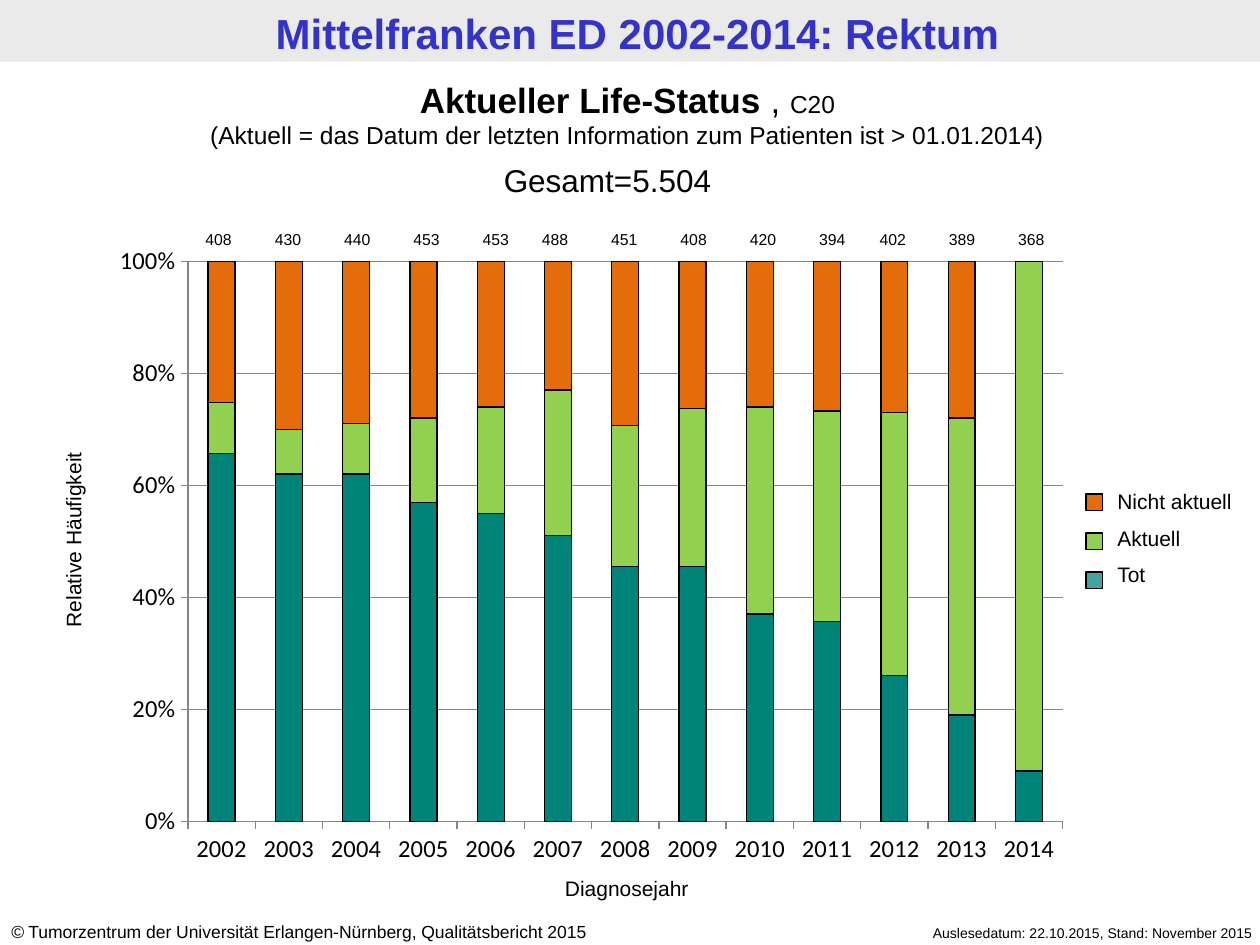
from lxml import etree
from pptx import Presentation
from pptx.chart.data import CategoryChartData
from pptx.dml.color import RGBColor
from pptx.enum.chart import XL_CHART_TYPE as ChartType, XL_TICK_MARK as TickMark
from pptx.enum.shapes import MSO_SHAPE as Shape
from pptx.enum.text import PP_ALIGN as Align
from pptx.oxml import parse_xml
from pptx.oxml.ns import nsdecls, qn
from pptx.util import Inches, Pt

BLACK = RGBColor(0x00, 0x00, 0x00)
BLUE = RGBColor(0x33, 0x33, 0xCC)
BAND = RGBColor(0xEA, 0xEA, 0xEA)
GRID = RGBColor(0x86, 0x86, 0x86)
TEAL = RGBColor(0x00, 0x83, 0x78)
LEGEND_TEAL = RGBColor(0x00, 0x83, 0x80)
GREEN = RGBColor(0x92, 0xD0, 0x50)
ORANGE = RGBColor(0xE4, 0x6C, 0x0A)

WIDTH, HEIGHT = 10, 7.5
YEARS = [str(year) for year in range(2002, 2015)]
SERIES = [
    ("Tot", TEAL, (65, 62, 62, 57, 55, 51, 45, 45, 37, 36, 26, 19, 9)),
    ("Aktuell", GREEN, (9, 8, 9, 15, 19, 26, 25, 28, 37, 38, 47, 53, 91)),
    ("Nicht aktuell", ORANGE, (25, 30, 29, 28, 26, 23, 29, 26, 26, 27, 27, 28, 0)),
]
# Case counts stand in three runs, each with its own left edge
COUNT_RUNS = [
    (1.46, (408, 430, 440, 453, 453)),
    (4.13, (488, 451, 408, 420, 394)),
    (6.81, (402, 389, 368)),
]


def inches(box):
    return [Inches(length) for length in box]


def add_text(slide, box, lines, size, align=Align.LEFT, color=BLACK, bold=False, gap=0):
    """Add a text box; each line is a list of runs."""
    shape = slide.shapes.add_textbox(*inches(box))
    frame = shape.text_frame
    frame.word_wrap = True
    for index, runs in enumerate(lines):
        paragraph = frame.paragraphs[0] if index == 0 else frame.add_paragraph()
        paragraph.alignment = align
        if index and gap:
            paragraph.space_before = Pt(gap)
        font = paragraph.font
        font.name, font.size, font.bold = "Arial", Pt(size), bold
        font.color.rgb = color
        for text in runs:
            paragraph.add_run().text = text
    return shape


def add_rectangle(slide, box, fill, outline=None):
    shape = slide.shapes.add_shape(Shape.RECTANGLE, *inches(box))
    shape.shadow.inherit = False
    shape.fill.solid()
    shape.fill.fore_color.rgb = fill
    if outline is None:
        shape.line.fill.background()
    else:
        shape.line.color.rgb = outline
        shape.line.width = Pt(0.75)
    return shape


def add_header(slide, box):
    left, top, width, height = box
    add_rectangle(slide, box, BAND)
    add_text(slide, (left + 0.06, top + 0.01, width, height),
             [["Mittelfranken ED 2002-2014: Rektum"]], 24, Align.CENTER, BLUE, True)


def add_headings(slide, box):
    left, top, width, height = box
    heading = add_text(slide, (left, top, width, 0.67), [
        ["Aktueller Life-Status ", ", ", "C20"],
        ["(Aktuell = das Datum der letzten Information zum Patienten ist > 01.01.2014)"],
    ], 14, Align.CENTER)
    name, comma, _ = heading.text_frame.paragraphs[0].runs
    name.font.bold = True
    name.font.size = comma.font.size = Pt(20)
    add_text(slide, (left + 3.94, top + 0.66, 2.2, 0.4), [["Gesamt=5.504"]], 18)


def style_axis(axis):
    axis.major_tick_mark = TickMark.OUTSIDE
    axis.minor_tick_mark = TickMark.NONE
    axis.format.line.color.rgb = GRID
    axis.tick_labels.font.size = Pt(14)


def set_plot_layout(chart, x, y, width, height):
    """Fix the inner plot area as shares of the chart."""
    plot_area = chart._chartSpace.chart.plotArea
    for old in plot_area.findall(qn("c:layout")):
        plot_area.remove(old)
    layout = parse_xml(f"<c:layout {nsdecls('c')}><c:manualLayout/></c:layout>")
    settings = [("layoutTarget", "inner"), ("xMode", "edge"), ("yMode", "edge"),
                ("x", x), ("y", y), ("w", width), ("h", height)]
    for tag, value in settings:
        etree.SubElement(layout[0], qn(f"c:{tag}")).set("val", str(value))
    plot_area.insert(0, layout)


def add_status_chart(slide, box):
    data = CategoryChartData(number_format="0")
    data.categories = YEARS
    for name, _, values in SERIES:
        data.add_series(name, values)
    chart = slide.shapes.add_chart(
        ChartType.COLUMN_STACKED_100, *inches(box), data).chart
    chart.has_legend = chart.has_title = False
    chart.font.name, chart.font.size = "Calibri", Pt(18)
    chart.font.color.rgb = BLACK
    set_plot_layout(chart, 0.09, 0.04, 0.89, 0.87)

    plot = chart.plots[0]
    plot.gap_width, plot.overlap, plot.vary_by_categories = 150, 100, False
    for series, (_, color, _) in zip(plot.series, SERIES):
        series.format.fill.solid()
        series.format.fill.fore_color.rgb = color
        series.format.line.color.rgb = BLACK
        series.format.line.width = Pt(0.75)

    style_axis(chart.category_axis)
    value_axis = chart.value_axis
    style_axis(value_axis)
    value_axis.minimum_scale, value_axis.maximum_scale = 0, 1
    value_axis.major_unit = 0.2
    value_axis.has_major_gridlines = True
    value_axis.major_gridlines.format.line.color.rgb = GRID
    value_axis.tick_labels.number_format = "0%"
    value_axis.tick_labels.number_format_is_linked = False


def add_axis_titles(slide, box):
    left, top, width, height = box
    title = add_text(slide, (left - 1.41, top + 2.26, 2.41, 0.31),
                     [["Relative Häufigkeit"]], 12, Align.CENTER)
    title.rotation = 270
    add_text(slide, (left + 3.06, top + height - 0.08, 2.25, 0.31),
             [["Diagnosejahr"]], 12, Align.CENTER)


def add_counts(slide, top, step=0.55):
    for left, counts in COUNT_RUNS:
        for index, count in enumerate(counts):
            add_text(slide, (left + index * step, top, step, 0.25),
                     [[str(count)]], 9, Align.CENTER)


def add_legend(slide, box):
    left, top, width, height = box
    names = [[name] for name, _, _ in reversed(SERIES)]
    add_text(slide, (left + 0.15, top, width - 0.15, height), names, 12, gap=6.5)
    for index, color in enumerate((ORANGE, GREEN, LEGEND_TEAL)):
        key = add_rectangle(slide, (left, top + 0.09 + index * 0.31, 0.13, 0.13),
                            color, BLACK)
    # The last key is slightly transparent
    fill_color = key._element.spPr.find(qn("a:solidFill"))[0]
    etree.SubElement(fill_color, qn("a:alpha")).set("val", "74000")


def add_footer(slide, box):
    left, top, width, height = box
    notice = add_text(slide, (left - 0.01, top, 5.24, height), [
        ["©", " Tumorzentrum der Universität Erlangen-Nürnberg, Qualitätsbericht 2015"]], 10)
    notice.text_frame.paragraphs[0].runs[0].font.italic = True
    add_text(slide, (left + width - 3.35, top + 0.03, 3.39, height - 0.03),
             [["Auslesedatum: 22.10.2015, Stand: November 2015"]], 8, Align.RIGHT)


def main():
    presentation = Presentation()
    presentation.slide_width, presentation.slide_height = Inches(WIDTH), Inches(HEIGHT)
    slide = presentation.slides.add_slide(presentation.slide_layouts[6])
    chart_box = (0.79, 1.87, 7.8, 5.11)
    add_header(slide, (0, 0, WIDTH, 0.49))
    add_footer(slide, (0, HEIGHT - 0.24, WIDTH, 0.27))
    add_status_chart(slide, chart_box)
    add_axis_titles(slide, chart_box)
    add_counts(slide, 1.77)
    add_headings(slide, (-0.04, 0.57, 10.04, 1.06))
    add_legend(slide, (8.62, 3.83, 1.38, 0.91))
    presentation.save("out.pptx")


if __name__ == "__main__":
    main()
